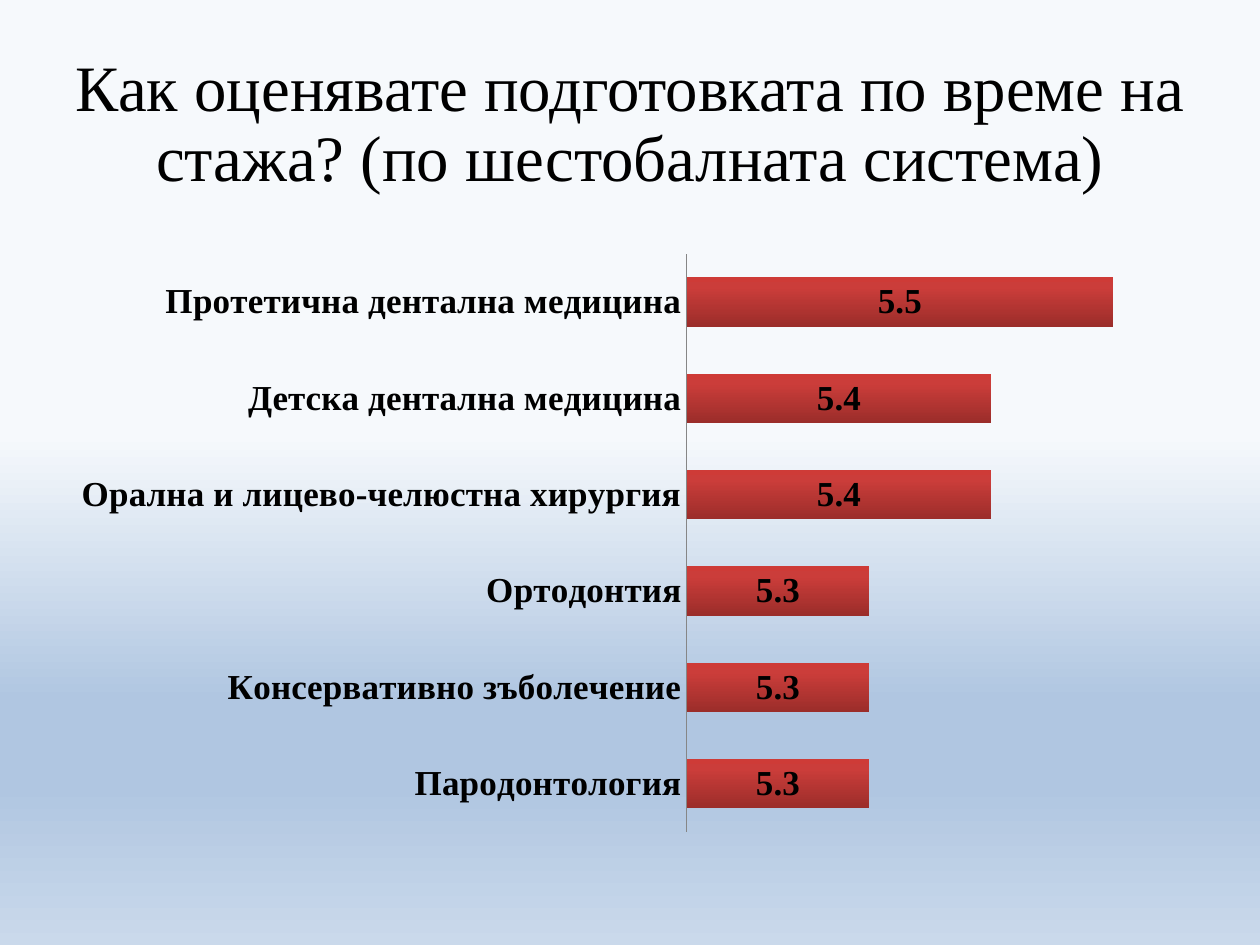
import pptx
import pptx.chart.data
import pptx.dml.color
import pptx.enum.chart
import pptx.enum.text
import pptx.oxml
import pptx.oxml.ns
import pptx.util
from lxml import etree

Inches, Pt = pptx.util.Inches, pptx.util.Pt
RGBColor = pptx.dml.color.RGBColor
qn = pptx.oxml.ns.qn

BLACK = RGBColor(0x00, 0x00, 0x00)
AXIS_GRAY = RGBColor(0x86, 0x86, 0x86)
PALE = RGBColor(0xF6, 0xF9, 0xFC)
BLUE = RGBColor(0xB0, 0xC6, 0xE1)
LIGHT_BLUE = RGBColor(0xCA, 0xD9, 0xEB)
DARK_RED = RGBColor(0x9B, 0x2D, 0x2A)
MID_RED = RGBColor(0xCB, 0x3D, 0x3A)
RED = RGBColor(0xCE, 0x3B, 0x37)

RATINGS = [
    ("Пародонтология", 5.3),
    ("Консервативно зъболечение", 5.3),
    ("Ортодонтия", 5.3),
    ("Орална и лицево-челюстна хирургия", 5.4),
    ("Детска дентална медицина", 5.4),
    ("Протетична дентална медицина", 5.5),
]


class SlideBuilder:
    font_name = "Times New Roman"

    def __init__(self, prs):
        self.slide = prs.slides.add_slide(prs.slide_layouts[5])

    def style(self, font, size, bold=None):
        font.name, font.size, font.bold = self.font_name, Pt(size), bold
        font.color.rgb = BLACK

    def gradient(self, fill, root, stops, angle):
        """Fill with (percent, colour) stops; angle is clockwise degrees."""
        fill.gradient()
        grad = root.find(".//" + qn("a:gradFill"))
        for child in list(grad):
            grad.remove(child)
        stop_list = etree.SubElement(grad, qn("a:gsLst"))
        for percent, color in stops:
            gs = etree.SubElement(stop_list, qn("a:gs"), pos=str(percent * 1000))
            etree.SubElement(gs, qn("a:srgbClr"), val=str(color))
        etree.SubElement(grad, qn("a:lin"), ang=str(angle * 60000), scaled="0")

    def background(self, stops):
        self.gradient(self.slide.background.fill, self.slide.element, stops, 90)

    def title(self, text, x, y, w, h):
        sp = self.slide.shapes.title
        sp.left, sp.top, sp.width, sp.height = map(Inches, (x, y, w, h))
        tf = sp.text_frame
        tf.text = text
        tf.word_wrap = True
        tf.vertical_anchor = pptx.enum.text.MSO_ANCHOR.MIDDLE
        tf.auto_size = pptx.enum.text.MSO_AUTO_SIZE.TEXT_TO_FIT_SHAPE
        # Shrink 44 pt to 90 %
        tf._txBody.bodyPr.find(qn("a:normAutofit")).set("fontScale", "90000")
        p = tf.paragraphs[0]
        p.alignment = pptx.enum.text.PP_ALIGN.CENTER
        self.style(p.font, 44)

    def bar_chart(self, ratings, x, y, w, h):
        data = pptx.chart.data.CategoryChartData()
        data.categories = [name for name, _ in ratings]
        data.add_series("Series 1", [value for _, value in ratings])
        chart = self.slide.shapes.add_chart(
            pptx.enum.chart.XL_CHART_TYPE.BAR_STACKED,
            *map(Inches, (x, y, w, h)), data).chart
        chart.has_legend = chart.has_title = False
        chart.font.name, chart.font.size = "Calibri", Pt(18)
        chart.font.color.rgb = BLACK

        # Axes
        cat_axis, val_axis = chart.category_axis, chart.value_axis
        cat_axis.major_tick_mark = pptx.enum.chart.XL_TICK_MARK.NONE
        cat_axis.format.line.color.rgb = AXIS_GRAY
        cat_axis.format.line.width = Pt(0.75)
        self.style(cat_axis.tick_labels.font, 20, True)
        val_axis.minimum_scale, val_axis.maximum_scale = 5.15, 5.55
        val_axis.has_major_gridlines = False
        val_axis.visible = False

        # Bars and their values
        plot = chart.plots[0]
        plot.gap_width, plot.overlap = 95, 100
        plot.vary_by_categories = False
        series = plot.series[0]
        self.gradient(series.format.fill, series._element,
                      [(0, DARK_RED), (80, MID_RED), (100, RED)], 270)
        labels = series.data_labels
        labels.show_value = True
        labels.number_format, labels.number_format_is_linked = "0.0", False
        labels.position = pptx.enum.chart.XL_LABEL_POSITION.CENTER
        self.style(labels.font, 20, True)

        # Inner plot area as fractions of the chart
        plot_area = chart.element.find(".//" + qn("c:plotArea"))
        for old in plot_area.findall(qn("c:layout")):
            plot_area.remove(old)
        layout = etree.Element(qn("c:layout"))
        manual = etree.SubElement(layout, qn("c:manualLayout"))
        for tag, val in (("layoutTarget", "inner"), ("xMode", "edge"),
                         ("yMode", "edge"), ("x", "0.55"), ("y", "0.02"),
                         ("w", "0.43"), ("h", "0.96")):
            etree.SubElement(manual, qn("c:" + tag), val=val)
        plot_area.insert(0, layout)


def main():
    prs = pptx.Presentation()
    prs.slide_width, prs.slide_height = Inches(10), Inches(7.5)
    s = SlideBuilder(prs)
    s.background([(46, PALE), (74, BLUE), (83, BLUE), (100, LIGHT_BLUE)])
    s.title("Как оценявате подготовката по време на стажа? "
            "(по шестобалната система)", 0.5, 0.3, 9, 1.25)
    s.bar_chart(RATINGS, 0.5, 1.92, 9, 4.78)
    prs.save("out.pptx")


if __name__ == "__main__":
    main()
